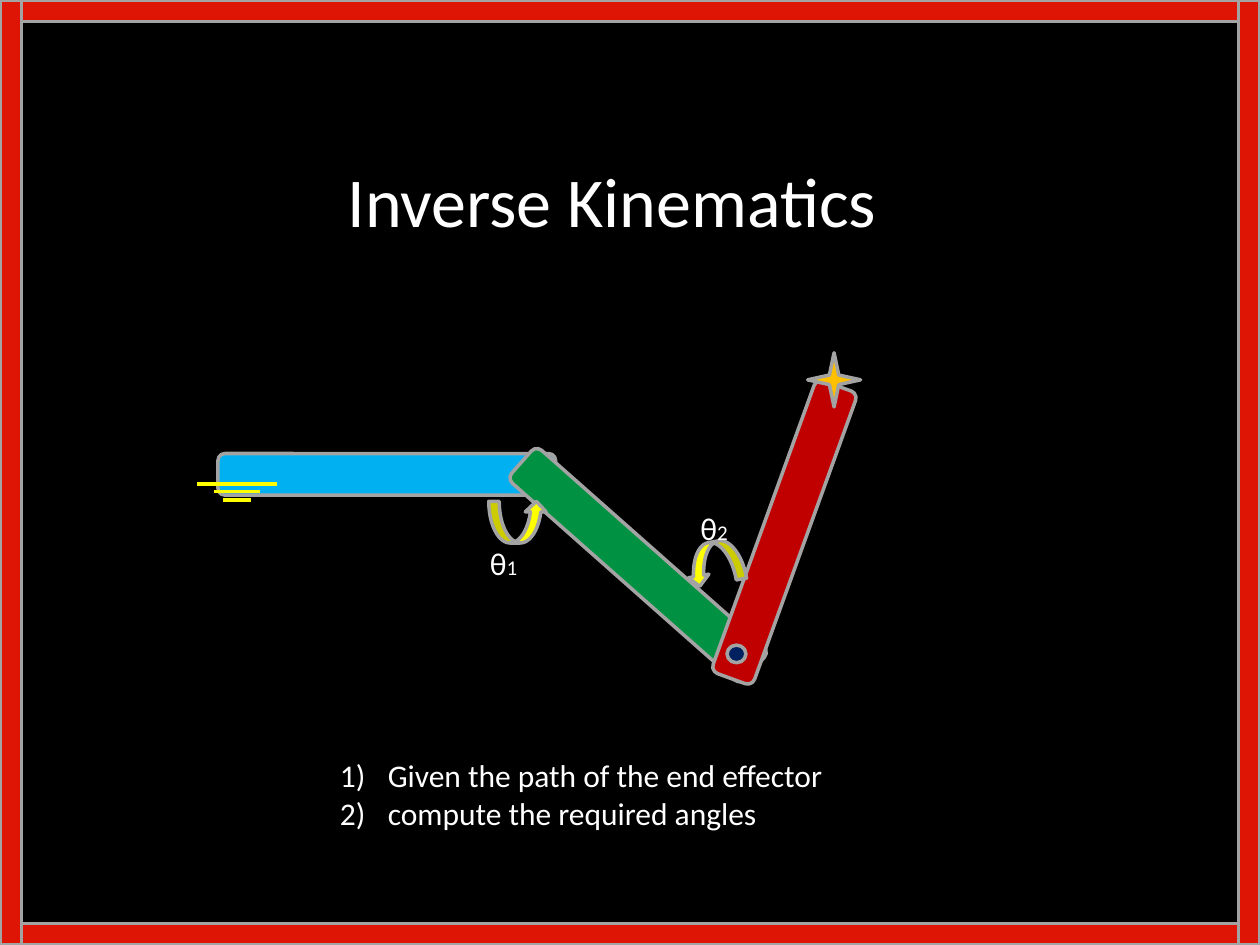
from lxml import etree
from pptx import Presentation
from pptx.dml.color import RGBColor
from pptx.enum.shapes import MSO_CONNECTOR, MSO_SHAPE as SHAPE
from pptx.enum.text import MSO_AUTO_SIZE as AUTO_SIZE
from pptx.oxml.ns import qn
from pptx.util import Inches, Pt

WIDTH, HEIGHT = 10, 7.5
FRAME = 0.17
WHITE, YELLOW, GREY = "FFFFFF", "FFFF00", "A3A3A3"
RED, BLUE, GREEN, NAVY = "C00000", "00B0F0", "009242", "002060"


def color(value):
    return RGBColor.from_string(value)


def add_part(slide, kind, box, fill, rotation=0):
    shape = slide.shapes.add_shape(kind, *map(Inches, box))
    shape.shadow.inherit = False
    shape.rotation = rotation
    shape.fill.solid()
    shape.fill.fore_color.rgb = color(fill)
    shape.line.color.rgb = color(GREY)
    shape.line.width = Pt(2)
    return shape


def add_text(slide, box, paragraphs, wrap=False):
    """Write paragraphs, each a list of (text, point size) runs."""
    text_frame = slide.shapes.add_textbox(*map(Inches, box)).text_frame
    text_frame.word_wrap = wrap
    text_frame.auto_size = AUTO_SIZE.NONE if wrap else AUTO_SIZE.SHAPE_TO_FIT_TEXT
    for index, runs in enumerate(paragraphs):
        paragraph = text_frame.paragraphs[0] if index == 0 else text_frame.add_paragraph()
        for text, size in runs:
            run = paragraph.add_run()
            run.text = text
            run.font.size = Pt(size)
            run.font.name = "Calibri"
            run.font.color.rgb = color(WHITE)
    return text_frame


def add_frame(slide, box, thickness):
    left, top, width, height = box
    for x in (left, left + width - thickness):
        add_part(slide, SHAPE.RECTANGLE, (x, top, thickness, height), "DE1404")
    for y in (top, top + height - thickness):
        bar = (left + thickness, y, width - 2 * thickness, thickness)
        add_part(slide, SHAPE.RECTANGLE, bar, "DE1404")


def add_robot_arm(slide, left, top):
    """Draw the three links, their joints and angles, and the end effector."""
    link = (0.35, 2.47)
    joint = (0.15, 0.14)
    turn = (0.46, 0.33)
    parts = [
        (SHAPE.ROUNDED_RECTANGLE, 0.16, 0.8, (2.68, 0.33), BLUE, 0),
        (SHAPE.OVAL, 2.6, 0.89, joint, NAVY, 0),
        (SHAPE.ROUNDED_RECTANGLE, 3.32, 0.45, link, GREEN, 311.5),
        (SHAPE.ROUNDED_RECTANGLE, 4.48, 0.19, link, RED, 199.9),
        (SHAPE.OVAL, 4.2, 2.32, joint, NAVY, 0),
        (SHAPE.CURVED_UP_ARROW, 2.31, 1.18, turn, YELLOW, 0),
        (SHAPE.CURVED_UP_ARROW, 3.87, 1.5, turn, YELLOW, 170.1),
        (SHAPE.STAR_4_POINT, 4.84, 0, (0.42, 0.43), "FFC000", 0),
    ]
    for kind, x, y, size, fill, rotation in parts:
        add_part(slide, kind, (left + x, top + y, *size), fill, rotation)
    for number, x, y in (("1", 2.22, 1.47), ("2", 3.89, 1.19)):
        add_text(slide, (left + x, top + y, 0.42, 0.4), [[("θ", 18), (number, 12)]])


def add_ground(slide, center, top):
    for y, width in ((0, 0.63), (0.06, 0.36), (0.13, 0.22)):
        ends = (center - width / 2, top + y, center + width / 2, top + y)
        connector = slide.shapes.add_connector(MSO_CONNECTOR.STRAIGHT, *map(Inches, ends))
        connector.line.color.rgb = color(YELLOW)
        connector.line.width = Pt(2)
        etree.SubElement(connector.element.spPr, qn("a:effectLst"))


def add_numbered_steps(slide, box, steps):
    text_frame = add_text(slide, box, [[(step, 18)] for step in steps], wrap=True)
    for paragraph in text_frame.paragraphs:
        properties = paragraph._p.get_or_add_pPr()
        properties.set("marL", str(Inches(0.38)))
        properties.set("indent", str(Inches(-0.38)))
        etree.SubElement(properties, qn("a:buFont"), typeface="+mj-lt")
        etree.SubElement(properties, qn("a:buAutoNum"), type="arabicParenR")


def main():
    presentation = Presentation()
    presentation.slide_width = Inches(WIDTH)
    presentation.slide_height = Inches(HEIGHT)
    slide = presentation.slides.add_slide(presentation.slide_layouts[6])
    slide.background.fill.solid()
    slide.background.fill.fore_color.rgb = color("000000")

    add_frame(slide, (0, 0, WIDTH, HEIGHT), FRAME)
    add_text(slide, (2.66, 1.2, 4.61, 0.77), [[("Inverse Kinematics", 40)]])
    add_robot_arm(slide, 1.57, 2.8)
    add_numbered_steps(
        slide,
        (2.6, 5.95, 4.14, 0.71),
        ["Given the path of the end effector", "compute the required angles"],
    )
    add_ground(slide, 1.88, 3.84)
    presentation.save("out.pptx")


if __name__ == "__main__":
    main()
